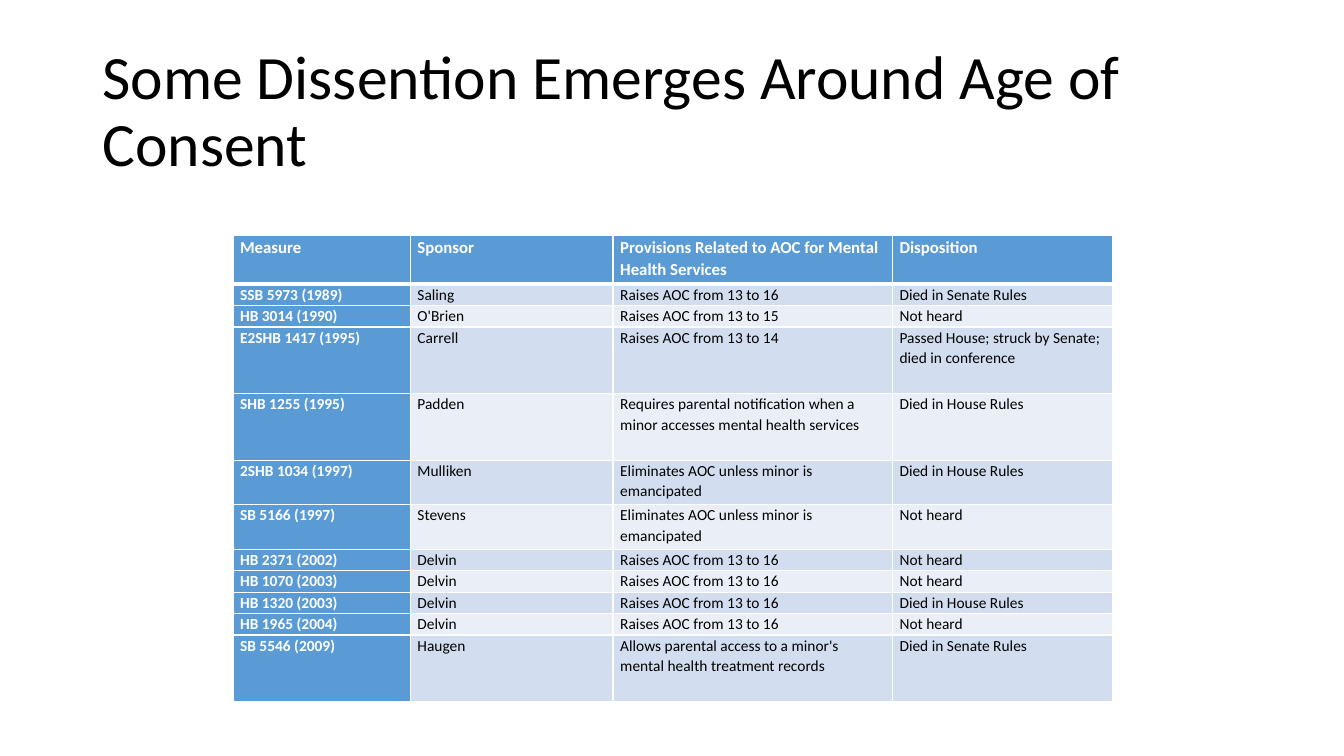
from lxml import etree
from pptx import Presentation
from pptx import util as u
from pptx.dml.color import RGBColor
from pptx.enum import text
from pptx.oxml import ns

TITLE = "Some Dissention Emerges Around Age of Consent"
HEADINGS = ("Measure", "Sponsor", "Provisions Related to AOC for Mental Health Services",
            "Disposition")
SHORT, MEDIUM, TALL = 0.54, 1.12, 1.68
HEADER_HEIGHT = 1.22
MEASURES = [
    (SHORT, "SSB 5973 (1989)", "Saling", "Raises AOC from 13 to 16", "Died in Senate Rules"),
    (SHORT, "HB 3014 (1990)", "O'Brien", "Raises AOC from 13 to 15", "Not heard"),
    (TALL, "E2SHB 1417 (1995)", "Carrell", "Raises AOC from 13 to 14",
     "Passed House; struck by Senate; died in conference"),
    (TALL, "SHB 1255 (1995)", "Padden",
     "Requires parental notification when a minor accesses mental health services",
     "Died in House Rules"),
    (MEDIUM, "2SHB 1034 (1997)", "Mulliken", "Eliminates AOC unless minor is emancipated",
     "Died in House Rules"),
    (MEDIUM, "SB 5166 (1997)", "Stevens", "Eliminates AOC unless minor is emancipated",
     "Not heard"),
    (SHORT, "HB 2371 (2002)", "Delvin", "Raises AOC from 13 to 16", "Not heard"),
    (SHORT, "HB 1070 (2003)", "Delvin", "Raises AOC from 13 to 16", "Not heard"),
    (SHORT, "HB 1320 (2003)", "Delvin", "Raises AOC from 13 to 16", "Died in House Rules"),
    (SHORT, "HB 1965 (2004)", "Delvin", "Raises AOC from 13 to 16", "Not heard"),
    (TALL, "SB 5546 (2009)", "Haugen",
     "Allows parental access to a minor's mental health treatment records",
     "Died in Senate Rules"),
]
COLUMN_WIDTHS = (4.47, 5.11, 7.04, 5.54)
TITLE_BOX = (2.33, 1.01, 29.21, 3.68)
TABLE_CORNER = (5.87, 5.94)
BLUE, BAND_DARK, BAND_LIGHT = "5B9BD5", "D2DEEF", "EAEFF7"
WHITE, BLACK = "FFFFFF", "000000"
CELL_FORMAT = {"margin_left": u.Cm(0.18), "margin_right": u.Cm(0.18),
               "margin_top": 0, "margin_bottom": 0,
               "vertical_anchor": text.MSO_ANCHOR.TOP}
TITLE_FORMAT = {"word_wrap": True, "auto_size": text.MSO_AUTO_SIZE.NONE,
                "vertical_anchor": text.MSO_ANCHOR.MIDDLE}


def color(value):
    return RGBColor.from_string(value)


def apply(target, values):
    for name, value in values.items():
        setattr(target, name, value)


def write(frame, words, spacing, size, hue, bold=False):
    para = frame.paragraphs[0]
    apply(para, {"alignment": text.PP_ALIGN.LEFT, "line_spacing": spacing})
    span = para.add_run()
    span.text = words
    apply(span.font, {"name": "Calibri", "size": u.Pt(size), "bold": bold})
    span.font.color.rgb = color(hue)


def add_borders(cell, widths):
    """Draw white borders; widths maps a side (L, R, T, B) to points."""
    properties = cell._tc.get_or_add_tcPr()
    for side, width in widths.items():
        line = etree.SubElement(properties, ns.qn(f"a:ln{side}"), w=str(u.Pt(width)))
        fill = etree.SubElement(line, ns.qn("a:solidFill"))
        etree.SubElement(fill, ns.qn("a:srgbClr"), val=WHITE)


def fill_cell(cell, words, row, column):
    header = row == 0
    strong = header or column == 0
    band = BAND_DARK if row % 2 else BAND_LIGHT
    apply(cell, CELL_FORMAT)
    add_borders(cell, {"L": 1, "R": 1, "T": 3 if row == 1 else 1, "B": 3 if header else 1})
    cell.fill.solid()
    cell.fill.fore_color.rgb = color(BLUE if strong else band)
    write(cell.text_frame, words, 1.07, 12 if header else 11,
          WHITE if strong else BLACK, strong)


def add_title(page):
    title = page.shapes.title
    apply(title, dict(zip(("left", "top", "width", "height"), map(u.Cm, TITLE_BOX))))
    apply(title.text_frame, TITLE_FORMAT)
    write(title.text_frame, TITLE, 0.9, 44, BLACK)


def add_measures(page):
    rows = [(HEADER_HEIGHT, *HEADINGS), *MEASURES]
    width = sum(COLUMN_WIDTHS)
    height = sum(row[0] for row in rows)
    table = page.shapes.add_table(len(rows), len(COLUMN_WIDTHS),
                                  *map(u.Cm, (*TABLE_CORNER, width, height))).table
    for column, column_width in zip(table.columns, COLUMN_WIDTHS):
        column.width = u.Cm(column_width)
    for r, (row_height, *words) in enumerate(rows):
        table.rows[r].height = u.Cm(row_height)
        for c, entry in enumerate(words):
            fill_cell(table.cell(r, c), entry, r, c)


def main():
    deck = Presentation()
    apply(deck, {"slide_width": u.Cm(33.87), "slide_height": u.Cm(19.05)})
    page = deck.slides.add_slide(deck.slide_layouts.get_by_name("Title Only"))
    add_title(page)
    add_measures(page)
    deck.save("out.pptx")


if __name__ == "__main__":
    main()
